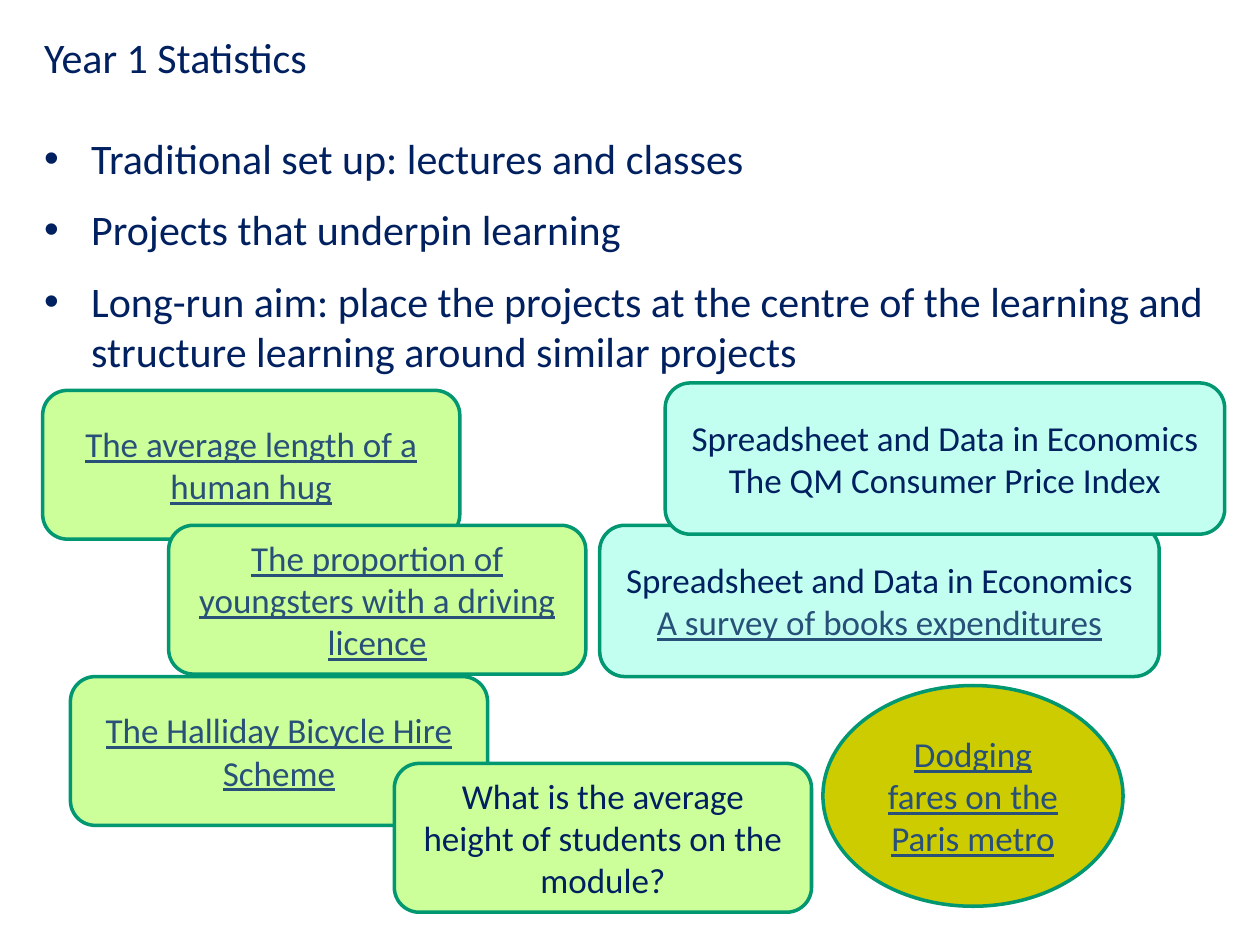
from typing import NamedTuple

from lxml.etree import SubElement
from pptx import Presentation
from pptx.dml.color import RGBColor
from pptx.enum.shapes import MSO_SHAPE
from pptx.enum.text import MSO_ANCHOR, PP_ALIGN
from pptx.oxml.ns import qn
from pptx.util import Cm, Pt

NAVY = RGBColor(0x00, 0x20, 0x60)
LINK_BLUE = RGBColor(0x28, 0x50, 0x78)
GREEN = RGBColor(0x00, 0x97, 0x71)
LIME = RGBColor(0xCC, 0xFF, 0x99)
AQUA = RGBColor(0xC2, 0xFF, 0xF0)
OLIVE = RGBColor(0xCC, 0xCC, 0x00)
FONT = "Calibri"


class Style(NamedTuple):
    preset: MSO_SHAPE
    fill: RGBColor
    width: float
    height: float


class Project(NamedTuple):
    style: Style
    left: float
    top: float
    lines: list[str]
    linked: list[bool]


SPREADSHEET = Style(MSO_SHAPE.ROUNDED_RECTANGLE, AQUA, 11.28, 3.05)
SURVEY = Style(MSO_SHAPE.FLOWCHART_ALTERNATE_PROCESS, LIME, 8.41, 3)
METRO = Style(MSO_SHAPE.OVAL, OLIVE, 6.05, 4.45)
COURSE = "Spreadsheet and Data in Economics"

# Listed from back to front
PROJECTS = [
    Project(SPREADSHEET, 12.09, 10.59,
            [COURSE, "A survey of books expenditures"], [False, True]),
    Project(SURVEY, 0.86, 7.87, ["The average length of a human hug"], [True]),
    Project(SURVEY, 3.4, 10.59,
            ["The proportion of youngsters with a driving licence"], [True]),
    Project(SURVEY, 1.42, 13.64, ["The Halliday Bicycle Hire Scheme"], [True]),
    Project(SURVEY, 7.95, 15.39,
            ["What is the average height of students on the module?"], [False]),
    Project(METRO, 16.59, 13.82, ["Dodging fares on the Paris metro"], [True]),
    Project(SPREADSHEET, 13.41, 7.72,
            [COURSE, "The QM Consumer Price Index"], [False, False]),
]

TITLE = "Year 1 Statistics"
BULLETS = [
    "Traditional set up: lectures and classes",
    "Projects that underpin learning",
    "Long-run aim: place the projects at the centre of the learning and "
    "structure learning around similar projects",
]


def format_runs(paragraph, size: int, color: RGBColor, underline: bool = False) -> None:
    for run in paragraph.runs:
        run.font.name = FONT
        run.font.size = Pt(size)
        run.font.color.rgb = color
        run.font.underline = underline


def add_bullet(paragraph) -> None:
    properties = paragraph._p.get_or_add_pPr()
    properties.set("marL", str(Cm(0.95)))
    properties.set("indent", str(-Cm(0.95)))
    SubElement(properties, qn("a:buFont"), typeface="Arial")
    SubElement(properties, qn("a:buChar"), char="•")


def add_project(slide, project: Project) -> None:
    style = project.style
    shape = slide.shapes.add_shape(
        style.preset, Cm(project.left), Cm(project.top),
        Cm(style.width), Cm(style.height))
    shape.shadow.inherit = False
    shape.fill.solid()
    shape.fill.fore_color.rgb = style.fill
    shape.line.color.rgb = GREEN
    shape.line.width = Pt(2)

    text_frame = shape.text_frame
    text_frame.word_wrap = True
    text_frame.vertical_anchor = MSO_ANCHOR.MIDDLE
    text_frame.text = "\n".join(project.lines)
    for paragraph, linked in zip(text_frame.paragraphs, project.linked):
        paragraph.alignment = PP_ALIGN.CENTER
        format_runs(paragraph, 20, LINK_BLUE if linked else NAVY, linked)


def add_outline(slide) -> None:
    text_box = slide.shapes.add_textbox(Cm(0.64), Cm(0.51), Cm(24.05), Cm(7.26))
    text_frame = text_box.text_frame
    text_frame.word_wrap = True
    text_frame.text = "\n".join([TITLE, *BULLETS])
    title, *bullets = text_frame.paragraphs
    title.space_after = Pt(29)
    for paragraph in bullets:
        paragraph.space_after = Pt(12)
        add_bullet(paragraph)
    for paragraph in text_frame.paragraphs:
        format_runs(paragraph, 24, NAVY)


def main() -> None:
    presentation = Presentation()
    presentation.slide_width = Cm(25.4)
    presentation.slide_height = Cm(19.05)
    slide = presentation.slides.add_slide(presentation.slide_layouts[6])

    # Overlapping project cards
    for project in PROJECTS:
        add_project(slide, project)

    # Title and bullet points
    add_outline(slide)

    presentation.save("out.pptx")


if __name__ == "__main__":
    main()
